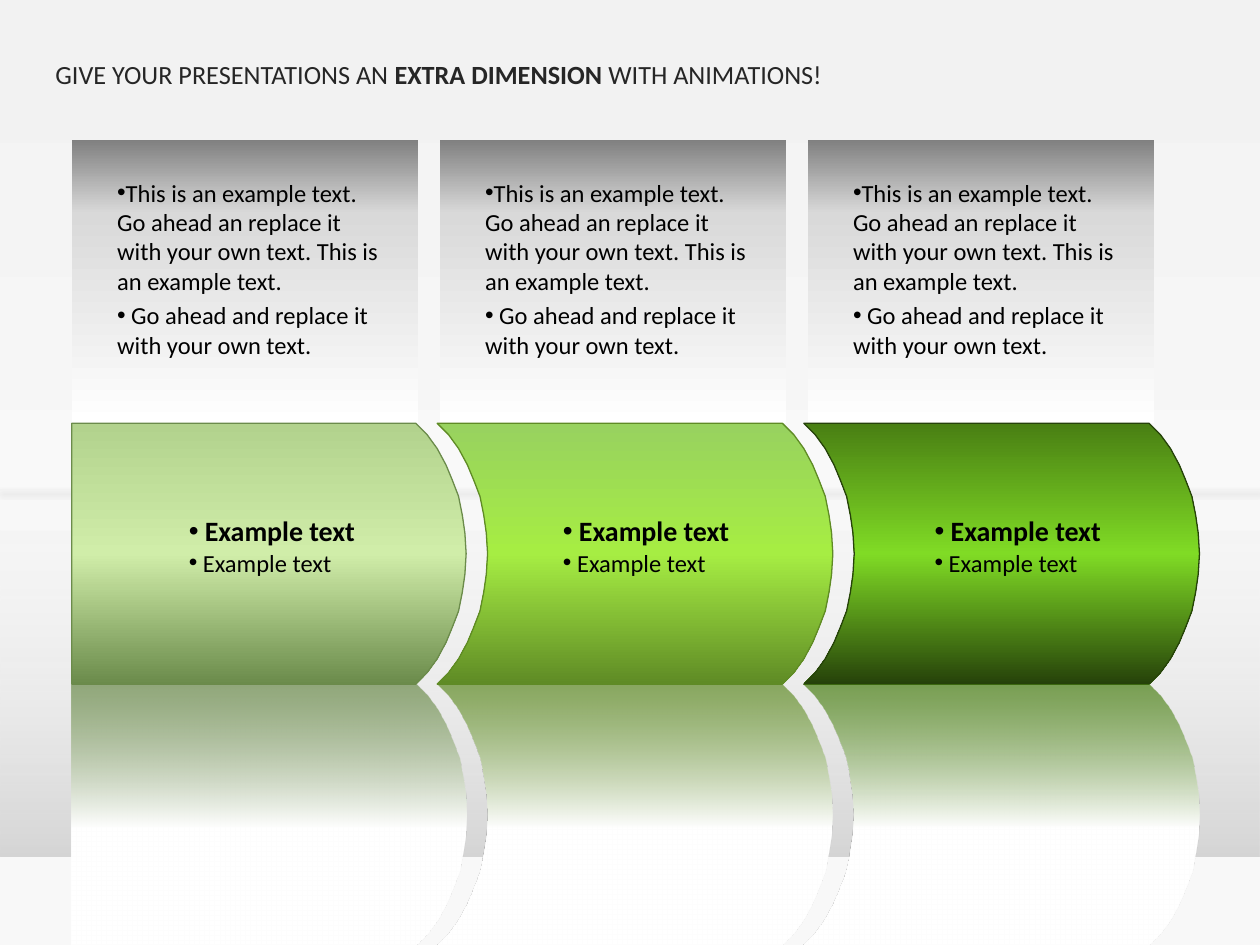
from lxml.etree import SubElement
from pptx import Presentation
from pptx.dml.color import RGBColor
from pptx.enum.shapes import MSO_CONNECTOR, MSO_SHAPE
from pptx.enum.text import MSO_ANCHOR, MSO_AUTO_SIZE, PP_ALIGN
from pptx.oxml.ns import qn
from pptx.util import Inches, Pt

COLORS = {
    "white": "FFFFFF", "mist": "F2F2F2", "silver": "D9D9D9", "ash": "BFBFBF",
    "gray": "808080", "ink": "262626", "black": "000000",
}
ARROWS = [
    {"top": "B2D28D", "middle": "D0EDA9", "bottom": "6B8B4B", "reflection": "6B8B4B", "label": 14},
    {"top": "98D25F", "middle": "A6ED43", "bottom": "5F8B25", "reflection": "5F8B25", "label": 43.7},
    {"top": "497F13", "middle": "80DB25", "bottom": "26420A", "reflection": "497F13", "label": 73.2},
]
CARD_TEXT = [
    "This is an example text. Go ahead an replace it with your own text. This is an example text.",
    " Go ahead and replace it with your own text.",
]
LABEL_TEXT = [" Example text", " Example text"]

presentation = Presentation()
presentation.slide_width = Inches(10)
presentation.slide_height = Inches(7.5)
unit = presentation.slide_width / 100
slide = presentation.slides.add_slide(presentation.slide_layouts[4])
shapes = slide.shapes


def grid(*lengths):
    return [round(length * unit) for length in lengths]


def paint_gradient(shape, stops, angle=270):
    shape.shadow.inherit = False
    shape.fill.gradient()
    shape.fill.gradient_angle = angle
    stop_list = shape.element.spPr.find(qn("a:gradFill")).find(qn("a:gsLst"))
    for stop in list(stop_list):
        stop_list.remove(stop)
    for position, color, opacity in stops:
        stop = SubElement(stop_list, qn("a:gs"), pos=str(position * 1000))
        tone = SubElement(stop, qn("a:srgbClr"), val=color)
        if opacity < 100:
            SubElement(tone, qn("a:alpha"), val=str(opacity * 1000))


backdrop = shapes.add_shape(MSO_SHAPE.RECTANGLE, *grid(0, 0, 100, 75))
paint_gradient(backdrop, [(1, COLORS["mist"], 100), (100, COLORS["white"], 100)])
backdrop.line.fill.background()

floor = shapes.add_shape(MSO_SHAPE.RECTANGLE, *grid(0, 42.1, 100, 32.9))
floor.shadow.inherit = False
floor.fill.solid()
floor.fill.fore_color.rgb = RGBColor.from_string(COLORS["mist"])
floor.line.fill.background()
floor_tone = floor.element.spPr.find(qn("a:solidFill")).find(qn("a:srgbClr"))
SubElement(floor_tone, qn("a:alpha"), val="49000")

horizon = shapes.add_connector(MSO_CONNECTOR.STRAIGHT, *grid(0, 38.9, 100, 38.9))
horizon.line.color.rgb = RGBColor.from_string(COLORS["mist"])
horizon.line.width = Pt(1)
effects = SubElement(horizon.element.spPr, qn("a:effectLst"))
shadow = SubElement(effects, qn("a:outerShdw"), blurRad=str(Pt(3.1)), dist=str(Pt(1.6)), dir="5400000")
shadow_tone = SubElement(shadow, qn("a:srgbClr"), val=COLORS["black"])
SubElement(shadow_tone, qn("a:alpha"), val="16000")

shade = shapes.add_shape(MSO_SHAPE.RECTANGLE, *grid(0, 30.3, 100, 37.7))
paint_gradient(shade, [(16, COLORS["white"], 0), (65, COLORS["silver"], 37), (100, COLORS["ash"], 62)])
shade.line.fill.background()

arrow_top, arrow_height, arrow_pitch = 33.6, 20.7, 29.1
upper_curve = [(0, 0), (0.9, 0.9), (1.7, 2), (2.4, 3.3), (2.9, 4.5), (3.4, 5.8), (3.7, 7.3), (3.9, 8.7)]
lower_curve = [(x, arrow_height - y) for x, y in reversed(upper_curve)]
curve = upper_curve + [(4, arrow_height / 2)] + lower_curve
lists = []

for column, arrow in enumerate(ARROWS):
    card_left = 5.7 + 29.2 * column
    card = shapes.add_shape(MSO_SHAPE.RECTANGLE, *grid(card_left, 11.1, 27.5, 22.5))
    paint_gradient(
        card,
        [(0, COLORS["white"], 100), (74, COLORS["silver"], 100), (100, COLORS["gray"], 100)],
        angle=90,
    )
    card.line.fill.background()

    left = 5.6 + arrow_pitch * column
    right = 33 + arrow_pitch * column
    left_curve = curve if column else [(0.1, 0), (0.1, arrow_height)]
    outline = [(right + x, y) for x, y in curve] + [(left + x, y) for x, y in reversed(left_curve)]
    body_stops = [(0, arrow["top"], 100), (50, arrow["middle"], 100), (100, arrow["bottom"], 100)]
    reflection_stops = [(0, arrow["reflection"], 70), (55, COLORS["white"], 100)]
    for row, stops in enumerate([body_stops, reflection_stops]):
        top = arrow_top + arrow_height * row
        points = [grid(x, top + y) for x, y in outline]
        builder = shapes.build_freeform(*points[0])
        builder.add_line_segments(points[1:], close=True)
        band = builder.convert_to_shape()
        paint_gradient(band, stops)
        if row:
            band.line.fill.background()
        else:
            band.line.color.rgb = RGBColor.from_string(arrow["bottom"])
            band.line.width = Pt(0.75)

    card_body = slide.placeholders[column + 1]
    card_body.left, card_body.top, card_body.width, card_body.height = grid(card_left + 2.6, 13.6, 22.9, 15.6)
    shapes.element.append(card_body.element)
    lists.append((card_body, CARD_TEXT, [14, 14], [False, False], 2.8, True))
    label = shapes.add_textbox(*grid(arrow["label"], 40.3, 15.3, 8.1))
    lists.append((label, LABEL_TEXT, [16, 14], [True, False], 0, False))

for shape, lines, sizes, weights, gap, wrap in lists:
    frame = shape.text_frame
    frame.text = "\n".join(lines)
    frame.word_wrap = wrap
    frame.auto_size = MSO_AUTO_SIZE.SHAPE_TO_FIT_TEXT
    frame.vertical_anchor = MSO_ANCHOR.TOP
    for paragraph, size, bold in zip(frame.paragraphs, sizes, weights):
        paragraph.alignment = PP_ALIGN.LEFT
        paragraph.space_before = Pt(gap)
        properties = paragraph.runs[0].font
        properties.name, properties.size, properties.bold = "Calibri", Pt(size), bold
        properties.color.rgb = RGBColor.from_string(COLORS["black"])
        settings = paragraph._p.get_or_add_pPr()
        settings.set("marL", "0")
        settings.set("indent", "0")
        SubElement(settings, qn("a:buFont"), typeface="Arial")
        SubElement(settings, qn("a:buChar"), char="•")

spare = slide.placeholders[4].element
spare.getparent().remove(spare)

title = shapes.title
title.left, title.top, title.width, title.height = grid(3.4, 4.1, 75.7, 3.5)
shapes.element.append(title.element)
title.text_frame.vertical_anchor = MSO_ANCHOR.TOP
title.text_frame.auto_size = MSO_AUTO_SIZE.SHAPE_TO_FIT_TEXT
heading = title.text_frame.paragraphs[0]
heading.alignment = PP_ALIGN.LEFT
for text, bold in [
    ("GIVE YOUR PRESENTATIONS AN ", False),
    ("EXTRA DIMENSION ", True),
    ("WITH ANIMATIONS!", False),
]:
    run = heading.add_run()
    run.text = text
    run.font.name, run.font.size, run.font.bold = "Calibri", Pt(15), bold
    run.font.color.rgb = RGBColor.from_string(COLORS["ink"])

presentation.save("out.pptx")
